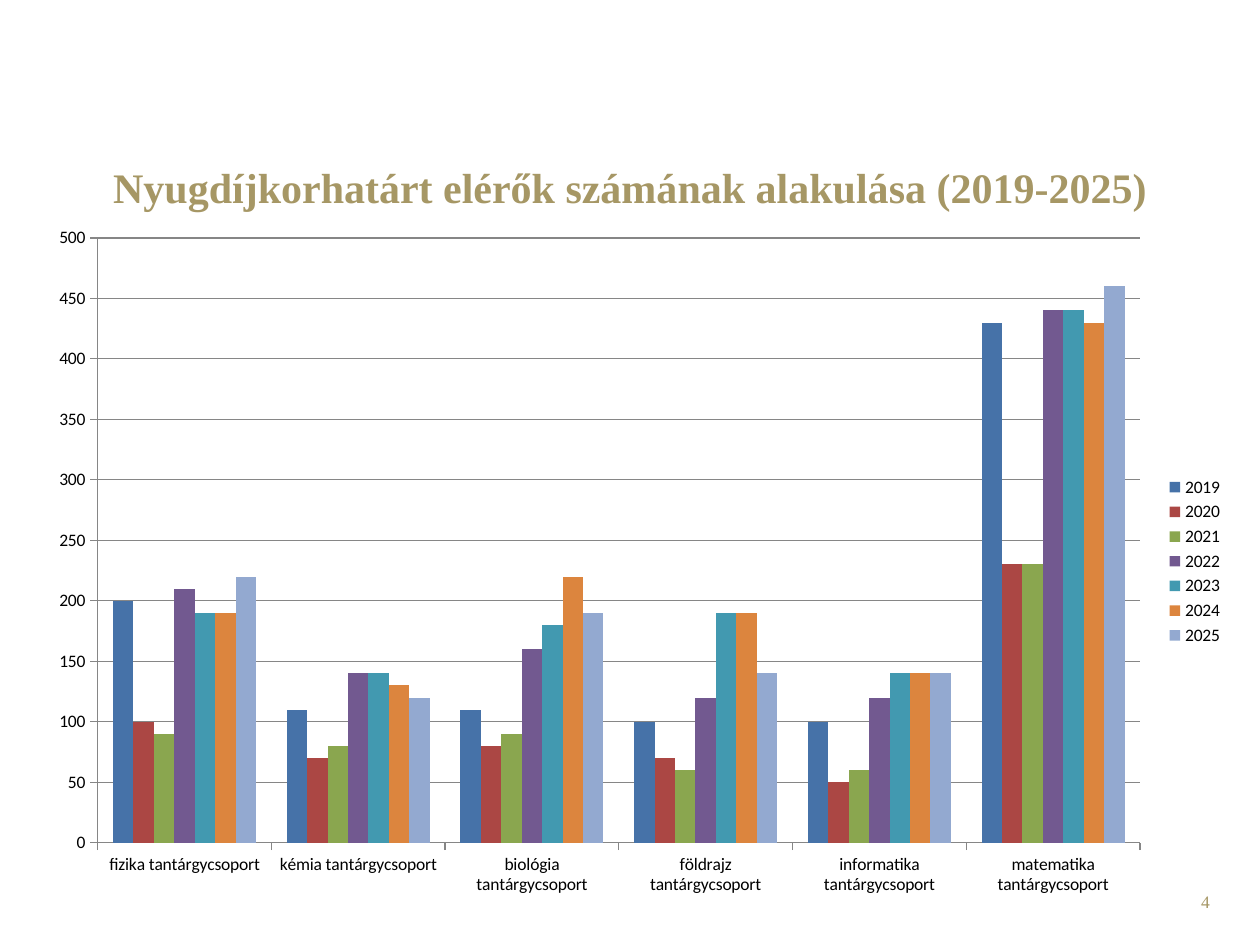
from pptx import Presentation
from pptx.chart.data import CategoryChartData
from pptx.dml.color import RGBColor
from pptx.enum import chart as charts, text
from pptx.util import Inches, Pt

GOLD = RGBColor(0xA6, 0x97, 0x65)
BLACK = RGBColor(0, 0, 0)
GREY = RGBColor(0x86, 0x86, 0x86)

SUBJECTS = ["fizika", "kémia", "biológia", "földrajz", "informatika", "matematika"]
SERIES = [
    ("2019", (200, 110, 110, 100, 100, 430), RGBColor(0x46, 0x72, 0xA8)),
    ("2020", (100, 70, 80, 70, 50, 230), RGBColor(0xAB, 0x47, 0x44)),
    ("2021", (90, 80, 90, 60, 60, 230), RGBColor(0x8A, 0xA6, 0x4F)),
    ("2022", (210, 140, 160, 120, 120, 440), RGBColor(0x72, 0x59, 0x90)),
    ("2023", (190, 140, 180, 190, 140, 440), RGBColor(0x42, 0x99, 0xB0)),
    ("2024", (190, 130, 220, 190, 140, 430), RGBColor(0xDC, 0x85, 0x3E)),
    ("2025", (220, 120, 190, 140, 140, 460), RGBColor(0x93, 0xA9, 0xD0)),
]
TEXTS = [
    ("4", (7.37, 7.02, 2.33, 0.4), text.PP_ALIGN.RIGHT, text.MSO_ANCHOR.TOP,
     {"size": Pt(10), "bold": False}),
    ("Nyugdíjkorhatárt elérők számának alakulása (2019-2025)", (0, 1.23, 10, 0.5),
     text.PP_ALIGN.CENTER, text.MSO_ANCHOR.MIDDLE, {"size": Pt(24), "bold": True}),
]
CHART_BOX = (0.28, 1.7, 9.53, 5.51)


def apply(target, values):
    for name, value in values.items():
        setattr(target, name, value)


def add_text(slide, content, box, alignment, anchor, style):
    shape = slide.shapes.add_textbox(*map(Inches, box))
    apply(shape.text_frame, {"word_wrap": True, "vertical_anchor": anchor})
    paragraph = shape.text_frame.paragraphs[0]
    paragraph.alignment = alignment
    run = paragraph.add_run()
    run.text = content
    apply(run.font, {"name": "Times New Roman", **style})
    run.font.color.rgb = GOLD


def add_chart(slide):
    data = CategoryChartData()
    data.categories = [f"{subject} tantárgycsoport" for subject in SUBJECTS]
    for name, values, _ in SERIES:
        data.add_series(name, values)
    chart = slide.shapes.add_chart(
        charts.XL_CHART_TYPE.COLUMN_CLUSTERED, *map(Inches, CHART_BOX), data).chart
    apply(chart, {"has_title": False, "has_legend": True})
    apply(chart.font, {"name": "Calibri", "size": Pt(10)})
    chart.font.color.rgb = BLACK
    apply(chart.legend, {"position": charts.XL_LEGEND_POSITION.RIGHT,
                         "include_in_layout": False})

    plot = chart.plots[0]
    apply(plot, {"gap_width": 150, "overlap": 0, "vary_by_categories": False})
    for series, (_, _, color) in zip(plot.series, SERIES):
        series.format.fill.solid()
        series.format.fill.fore_color.rgb = color

    value_axis = chart.value_axis
    apply(value_axis, {"minimum_scale": 0, "maximum_scale": 500, "major_unit": 50,
                       "has_major_gridlines": True})
    for axis in (chart.category_axis, value_axis):
        axis.major_tick_mark = charts.XL_TICK_MARK.OUTSIDE
    for part in (chart.category_axis, value_axis, value_axis.major_gridlines):
        part.format.line.color.rgb = GREY
        part.format.line.width = Pt(0.75)


def main():
    presentation = Presentation()
    apply(presentation, {"slide_width": Inches(10), "slide_height": Inches(7.5)})
    slide = presentation.slides.add_slide(presentation.slide_layouts[6])
    for item in TEXTS:
        add_text(slide, *item)
    add_chart(slide)
    presentation.save("out.pptx")


if __name__ == "__main__":
    main()
